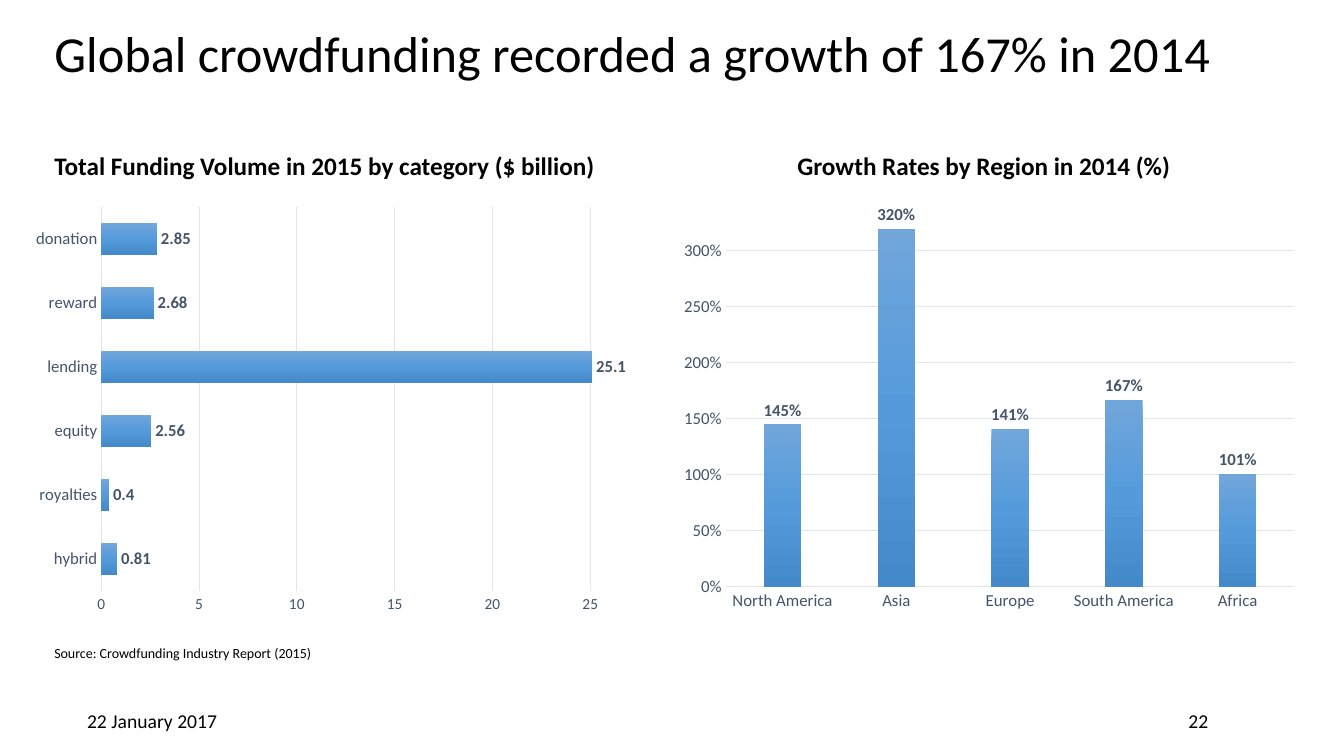
from pptx import Presentation
from pptx.chart.data import CategoryChartData
from pptx.dml.color import RGBColor
from pptx.enum.chart import XL_CHART_TYPE as ChartType, XL_LABEL_POSITION as LabelPos, XL_TICK_MARK as Tick
from pptx.enum.text import MSO_ANCHOR as Anchor, PP_ALIGN as Align
from pptx.oxml import parse_xml
from pptx.oxml.ns import nsdecls, qn
from pptx.util import Inches, Pt

GRID, SLATE, BLACK = "E0E5EB", "44546A", "000000"
BAR_STOPS = [(0, "71A6DB"), (50, "559BDB"), (100, "448ACA")]


def style(font, size, color=BLACK, bold=False):
    font.name = "Calibri"
    font.size = Pt(size)
    font.bold = bold
    font.color.rgb = RGBColor.from_string(color)


deck = Presentation()
deck.slide_width, deck.slide_height = Inches(13.33), Inches(7.5)
slide = deck.slides.add_slide(deck.slide_layouts[5])

headline = slide.shapes.title
headline.left, headline.top = Inches(0.44), Inches(0.02)
headline.width, headline.height = Inches(12.16), Inches(1.08)
headline.text_frame.vertical_anchor = Anchor.MIDDLE
headline_line = headline.text_frame.paragraphs[0]
headline_line.alignment = Align.LEFT
headline_line.line_spacing = 0.9
headline_run = headline_line.add_run()
headline_run.text = "Global crowdfunding recorded a growth of 167% in 2014"
style(headline_run.font, 36)

captions = [
    ("Total Funding Volume in 2015 by category ($ billion)", 0.44, 1.44, 5.6, 0.4, 18, True, Align.LEFT, Anchor.TOP),
    ("Growth Rates by Region in 2014 (%)", 7.81, 1.44, 3.94, 0.4, 18, True, Align.LEFT, Anchor.TOP),
    ("Source: Crowdfunding Industry Report (2015)", 0.44, 6.34, 2.83, 0.27, 10, False, Align.LEFT, Anchor.TOP),
    ("22 January 2017", 0.01, 6.95, 3, 0.4, 14, False, Align.CENTER, Anchor.MIDDLE),
    ("22", 10.45, 6.95, 2.87, 0.4, 14, False, Align.CENTER, Anchor.MIDDLE),
]
for words, left, top, width, height, size, bold, align, anchor in captions:
    caption = slide.shapes.add_textbox(Inches(left), Inches(top), Inches(width), Inches(height)).text_frame
    caption.word_wrap = align == Align.CENTER
    caption.vertical_anchor = anchor
    caption.paragraphs[0].alignment = align
    run = caption.paragraphs[0].add_run()
    run.text = words
    style(run.font, size, bold=bold)

funding = {"hybrid": 0.81, "royalties": 0.4, "equity": 2.56, "lending": 25.1, "reward": 2.68, "donation": 2.85}
growth = {"North America": 1.45, "Asia": 3.2, "Europe": 1.41, "South America": 1.67, "Africa": 1.01}
charts = [
    (ChartType.BAR_CLUSTERED, funding, (0.24, 1.97, 5.97, 4.2), "General", 26, 5, 11, 100, 0, None),
    (ChartType.COLUMN_CLUSTERED, growth, (6.57, 2.01, 6.47, 4.18), "0%", 3.3, 0.5, 12, 204, -24,
     {"x": 0.097, "y": 0.035, "w": 0.872, "h": 0.877}),
]
for kind, values, place, number_format, top_value, step, scale_size, gap, overlap, plot_area in charts:
    data = CategoryChartData(number_format=number_format)
    data.categories = list(values)
    data.add_series("Series 1", list(values.values()))
    chart = slide.shapes.add_chart(kind, *map(Inches, place), data).chart
    chart.has_legend = chart.has_title = False
    style(chart.font, 10)

    names, scale = chart.category_axis, chart.value_axis
    for axis, size in ((names, 12), (scale, scale_size)):
        axis.major_tick_mark = axis.minor_tick_mark = Tick.NONE
        style(axis.tick_labels.font, size, SLATE)
    scale.minimum_scale, scale.maximum_scale, scale.major_unit = 0, top_value, step
    scale.tick_labels.number_format = number_format
    scale.tick_labels.number_format_is_linked = False
    scale.format.line.fill.background()
    scale.has_major_gridlines = True
    for line in (names.format.line, scale.major_gridlines.format.line):
        line.color.rgb = RGBColor.from_string(GRID)
        line.width = Pt(0.75)

    plot = chart.plots[0]
    plot.vary_by_categories = False
    plot.gap_width, plot.overlap = gap, overlap
    plot.has_data_labels = True
    labels = plot.data_labels
    labels.show_value = True
    labels.position = LabelPos.OUTSIDE_END
    labels.number_format, labels.number_format_is_linked = number_format, False
    style(labels.font, 12, SLATE, True)

    stops = "".join(f'<a:gs pos="{at * 1000}"><a:srgbClr val="{color}"/></a:gs>' for at, color in BAR_STOPS)
    bars = plot.series[0]
    bars.invert_if_negative = False
    bars.format.fill.gradient()
    gradient = bars._element.find(".//" + qn("a:gradFill"))
    gradient.getparent().replace(gradient, parse_xml(
        f'<a:gradFill {nsdecls("a")} rotWithShape="1"><a:gsLst>{stops}</a:gsLst>'
        '<a:lin ang="5400000" scaled="0"/></a:gradFill>'))

    if plot_area:
        edges = "".join(f'<c:{side} val="{share}"/>' for side, share in plot_area.items())
        frame = chart._chartSpace.find(".//" + qn("c:plotArea"))
        for layout in frame.findall(qn("c:layout")):
            frame.remove(layout)
        frame.insert(0, parse_xml(
            f'<c:layout {nsdecls("c")}><c:manualLayout><c:layoutTarget val="inner"/>'
            f'<c:xMode val="edge"/><c:yMode val="edge"/>{edges}</c:manualLayout></c:layout>'))

deck.save("out.pptx")
